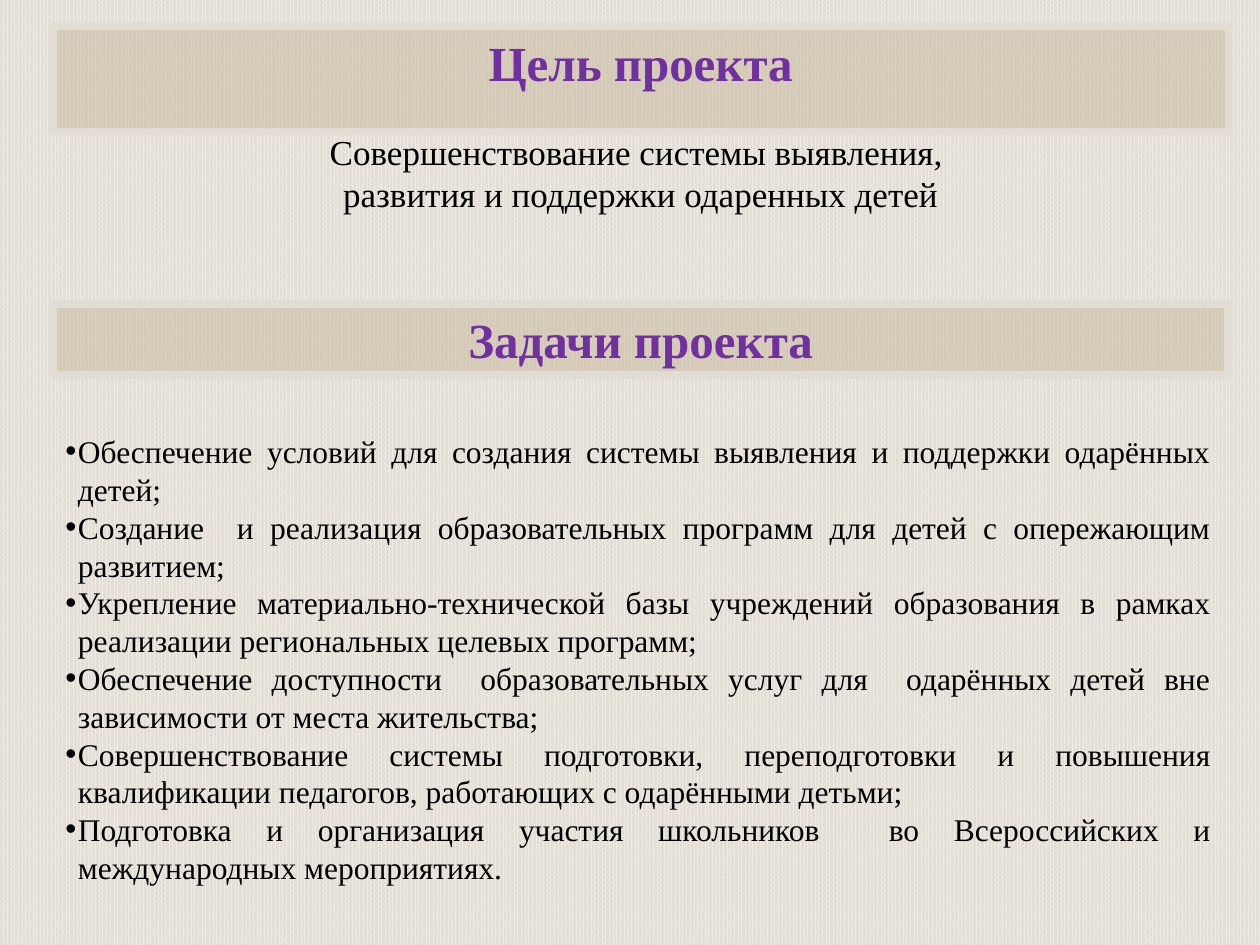
from lxml import etree
from pptx import Presentation
from pptx.dml.color import RGBColor
from pptx.enum import dml, shapes, text
from pptx.oxml import ns
from pptx.util import Inches, Pt

FONT = "Times New Roman"
BLACK = RGBColor(0x00, 0x00, 0x00)
PURPLE = RGBColor(0x70, 0x30, 0xA0)
SAND = RGBColor(0xC5, 0xB6, 0x99)
STONE = RGBColor(0xE2, 0xDD, 0xD4)
IVORY = RGBColor(0xEF, 0xEB, 0xE3)

LEFT = Inches(0.42)
WIDTH = Inches(9.33)
BANNER_HEIGHT = Inches(0.57)

GOAL = [
    "Совершенствование системы выявления, ",
    "развития и поддержки одаренных детей",
]
TASKS = [
    "Обеспечение условий для создания системы выявления и поддержки одарённых детей;",
    "Создание  и реализация образовательных программ для детей с опережающим развитием;",
    "Укрепление материально-технической базы учреждений образования в рамках "
    "реализации региональных целевых программ;",
    "Обеспечение доступности  образовательных услуг для  одарённых детей вне "
    "зависимости от места жительства;",
    "Совершенствование системы подготовки, переподготовки и повышения "
    "квалификации педагогов, работающих с одарёнными детьми;",
    "Подготовка и организация участия школьников  во Всероссийских и "
    "международных мероприятиях.",
]


def paint_background(page):
    fill = page.background.fill
    fill.patterned()
    fill.pattern = dml.MSO_PATTERN.PERCENT_80
    fill.fore_color.rgb = IVORY
    fill.back_color.rgb = STONE


def write_lines(shape, lines, size, color, alignment, anchor, bold=False):
    frame = shape.text_frame
    frame.text = "\n".join(lines)
    frame.word_wrap = True
    frame.auto_size = text.MSO_AUTO_SIZE.SHAPE_TO_FIT_TEXT
    frame.vertical_anchor = anchor
    for para in frame.paragraphs:
        para.alignment = alignment
        for span in para.runs:
            span.font.name = FONT
            span.font.size = Pt(size)
            span.font.bold = bold
            span.font.color.rgb = color


def format_banner(shape, top, heading):
    """Place a title or rectangle as a half-transparent heading band."""
    shape.left, shape.top = LEFT, top
    shape.width, shape.height = WIDTH, BANNER_HEIGHT
    shape.fill.solid()
    shape.fill.fore_color.rgb = SAND
    fill_color = shape._element.spPr.find(ns.qn("a:solidFill"))[0]
    etree.SubElement(fill_color, ns.qn("a:alpha"), val="50000")
    shape.line.color.rgb = STONE
    shape.line.width = Pt(4.5)
    write_lines(shape, [heading], 28, PURPLE, text.PP_ALIGN.CENTER,
                text.MSO_ANCHOR.TOP, bold=True)


def add_bullets(box, indent):
    for para in box.text_frame.paragraphs:
        properties = para._p.get_or_add_pPr()
        properties.set("marL", str(indent))
        properties.set("indent", str(-indent))
        etree.SubElement(properties, ns.qn("a:buFont"), typeface="Arial")
        etree.SubElement(properties, ns.qn("a:buChar"), char="•")


def main():
    deck = Presentation()
    deck.slide_width, deck.slide_height = Inches(10), Inches(7.5)
    page = deck.slides.add_slide(deck.slide_layouts[5])
    paint_background(page)

    tasks = page.shapes.add_textbox(LEFT, Inches(3.36), Inches(9.29), Inches(3.74))
    write_lines(tasks, TASKS, 18, BLACK, text.PP_ALIGN.JUSTIFY, text.MSO_ANCHOR.MIDDLE)
    add_bullets(tasks, Inches(0.1))

    tasks_banner = page.shapes.add_shape(
        shapes.MSO_SHAPE.RECTANGLE, LEFT, Inches(2.41), WIDTH, BANNER_HEIGHT)
    tasks_banner.shadow.inherit = False
    format_banner(tasks_banner, Inches(2.41), "Задачи проекта")

    goal = page.shapes.add_textbox(LEFT, Inches(0.99), WIDTH, Inches(0.77))
    write_lines(goal, GOAL, 20, BLACK, text.PP_ALIGN.CENTER, text.MSO_ANCHOR.TOP)

    format_banner(page.shapes.title, Inches(0.21), "Цель проекта")

    deck.save("out.pptx")


if __name__ == "__main__":
    main()
